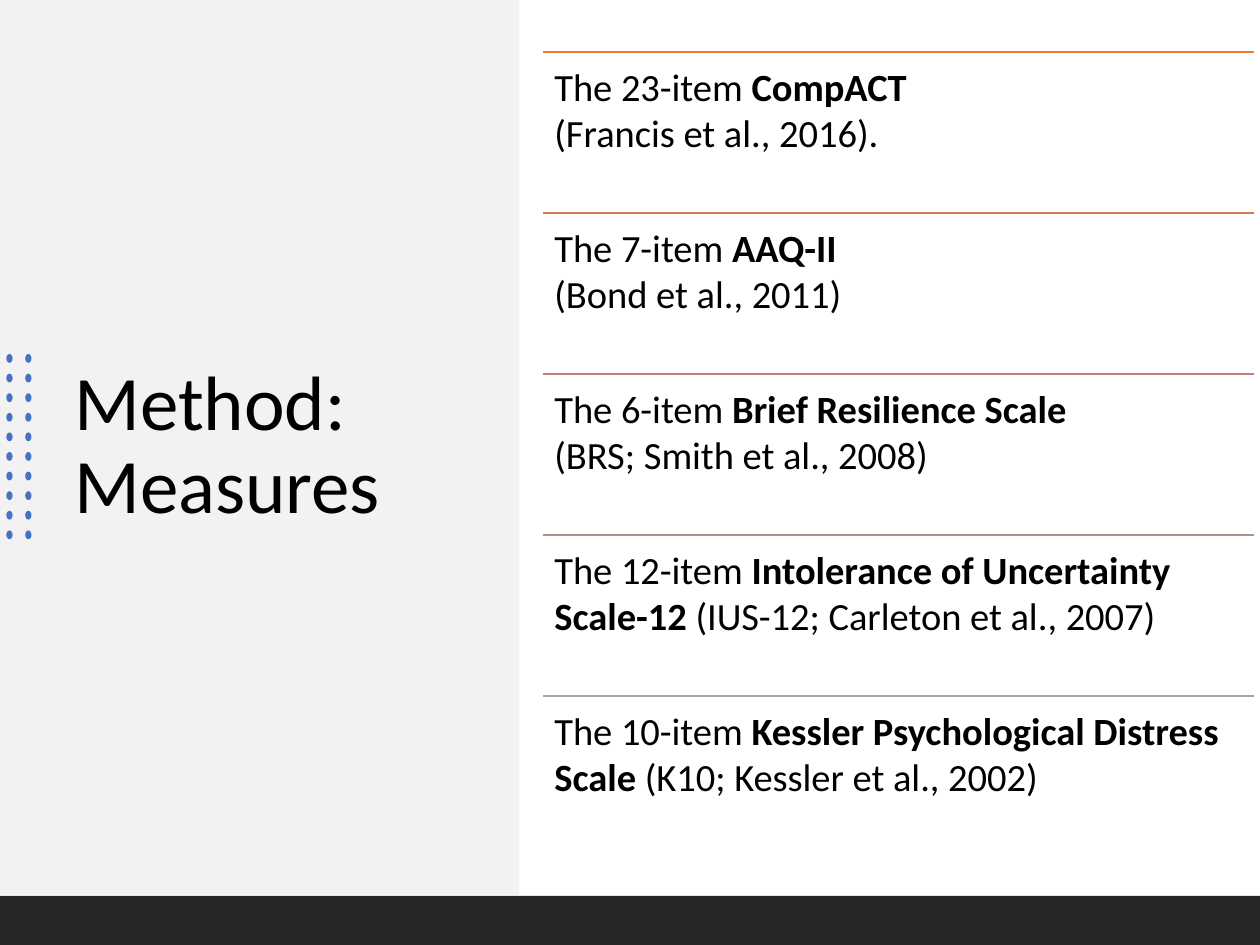
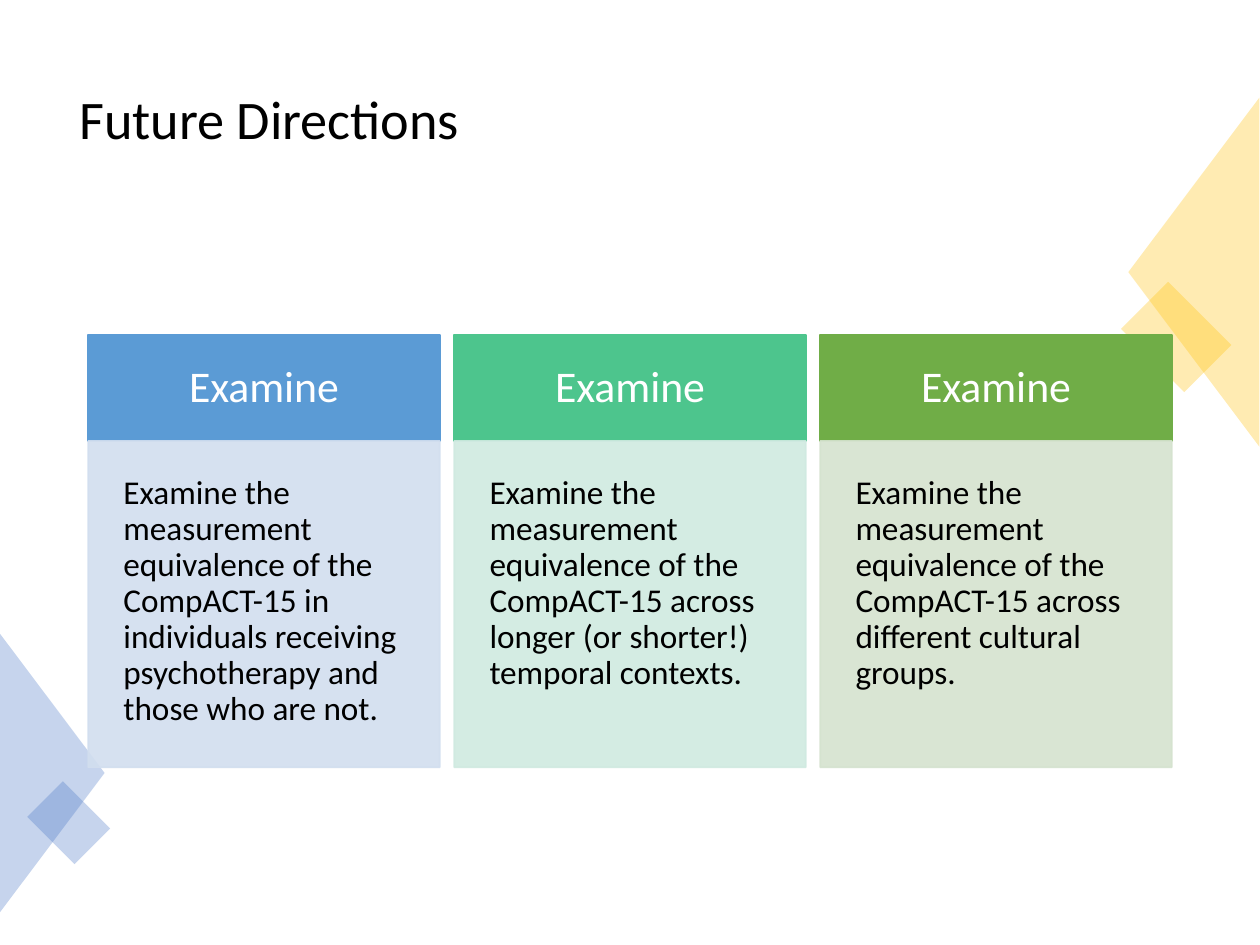
from dataclasses import dataclass

from lxml.etree import SubElement
from pptx import Presentation
from pptx.dml.color import RGBColor
from pptx.enum.shapes import MSO_CONNECTOR as Connector, MSO_SHAPE as Shape
from pptx.enum.text import MSO_ANCHOR as Anchor, MSO_AUTO_SIZE as AutoSize, PP_ALIGN as Align
from pptx.oxml.ns import qn
from pptx.util import Inches, Pt


@dataclass(frozen=True)
class Theme:
    """Colours, font and type sizes shared by the slides."""
    font: str = "Calibri"
    text: str = "000000"
    light: str = "FFFFFF"
    panel: str = "F2F2F2"
    band: str = "262626"
    blue: str = "4472C4"
    gold: str = "FFC000"
    side_title: int = 44
    top_title: int = 31
    measure: int = 22
    card_head: int = 25
    card_body: int = 19


THEME = Theme()
TITLE_ONLY = 5

MEASURES = [
    ("ED7D31", "The 23-item ", "CompACT", "\n(Francis et al., 2016)."),
    ("D87A51", "The 7-item ", "AAQ-II", "\n(Bond et al., 2011)"),
    ("C48170", "The 6-item ", "Brief Resilience Scale", "\n(BRS; Smith et al., 2008)"),
    ("B4908B", "The 12-item ", "Intolerance of Uncertainty Scale-12", " (IUS-12; Carleton et al., 2007)"),
    ("A5A5A5", "The 10-item ", "Kessler Psychological Distress Scale", " (K10; Kessler et al., 2002)"),
]

DIRECTIONS = [
    ("5B9BD5", "D2DEEF", "in individuals receiving psychotherapy and those who are not."),
    ("4DC58D", "D0EAE1", "across longer (or shorter!) temporal contexts."),
    ("70AD47", "D5E3CF", "across different cultural groups."),
]


def rgb(code):
    """Turn a hex code into a colour."""
    return RGBColor.from_string(code)


def add_block(slide, kind, box, colour, opacity=100, rotation=0, outlined=False):
    """Add a flat filled shape in a box given in inches."""
    block = slide.shapes.add_shape(kind, *map(Inches, box))
    block.shadow.inherit = False
    block.rotation = rotation
    block.fill.solid()
    block.fill.fore_color.rgb = rgb(colour)
    if outlined:
        block.line.color.rgb = rgb(colour)
        block.line.width = Pt(1)
    else:
        block.line.fill.background()
    if opacity < 100:
        for tint in block.element.spPr.iter(qn("a:srgbClr")):
            SubElement(tint, qn("a:alpha"), val=str(opacity * 1000))
    return block


def set_frame(frame, inset, anchor):
    """Give a text frame equal insets, wrapping and an anchor."""
    frame.word_wrap = True
    frame.vertical_anchor = anchor
    frame.margin_left = frame.margin_right = Inches(inset)
    frame.margin_top = frame.margin_bottom = Inches(inset)


def style(paragraph, size, colour, align=Align.LEFT, spacing=0.9):
    """Set the font, alignment and line spacing of a paragraph."""
    paragraph.alignment = align
    paragraph.line_spacing = spacing
    paragraph.font.name = THEME.font
    paragraph.font.size = Pt(size)
    paragraph.font.color.rgb = rgb(colour)


def set_title(slide, text, box, size):
    """Place and format the title placeholder."""
    title = slide.shapes.title
    title.left, title.top, title.width, title.height = map(Inches, box)
    title.text_frame.text = text
    title.text_frame.auto_size = AutoSize.NONE
    title.text_frame.vertical_anchor = Anchor.MIDDLE
    style(title.text_frame.paragraphs[0], size, THEME.text)
    return title


def add_dots(slide, box, columns=2, rows=10):
    """Fill a box with an even grid of small dots."""
    left, top, width, height = box
    dot_width, dot_height = 0.05, 0.07
    column_step = (width - dot_width) / (columns - 1)
    row_step = (height - dot_height) / (rows - 1)
    for row in range(rows):
        for column in range(columns):
            spot = (left + column * column_step, top + row * row_step, dot_width, dot_height)
            add_block(slide, Shape.OVAL, spot, THEME.blue)


def add_rule(slide, left, top, width, colour):
    """Draw a thin horizontal rule."""
    start, level, end = Inches(left), Inches(top), Inches(left + width)
    rule = slide.shapes.add_connector(Connector.STRAIGHT, start, level, end, level)
    rule.line.color.rgb = rgb(colour)
    rule.line.width = Pt(1)
    SubElement(rule.element.spPr, qn("a:effectLst"))


def add_measures(slide, box):
    """Stack the ruled measures evenly down a box."""
    left, top, width, height = box
    step = height / len(MEASURES)
    for index, (colour, lead, scale, citation) in enumerate(MEASURES):
        level = top + index * step
        add_rule(slide, left, level, width, colour)
        entry = slide.shapes.add_textbox(*map(Inches, (left, level, width, step)))
        set_frame(entry.text_frame, 0.09, Anchor.TOP)
        paragraph = entry.text_frame.paragraphs[0]
        style(paragraph, THEME.measure, THEME.text, spacing=1.0)
        paragraph.add_run().text = lead
        scale_run = paragraph.add_run()
        scale_run.text = scale
        scale_run.font.bold = True
        if citation.startswith("\n"):
            paragraph.add_line_break()
        paragraph.add_run().text = citation.lstrip("\n")


def add_card(slide, box, head_colour, body_colour, ending):
    """Build a heading block over a tinted text block."""
    left, top, width, height = box
    head_height = 0.84
    head = add_block(slide, Shape.RECTANGLE, (left, top, width, head_height), head_colour, outlined=True)
    set_frame(head.text_frame, 0.22, Anchor.MIDDLE)
    head.text_frame.text = "Examine"
    style(head.text_frame.paragraphs[0], THEME.card_head, THEME.light, Align.CENTER)
    body_box = (left, top + head_height, width, height - head_height)
    body = add_block(slide, Shape.RECTANGLE, body_box, body_colour, 90, outlined=True)
    set_frame(body.text_frame, 0.28, Anchor.TOP)
    body.text_frame.text = f"Examine the measurement equivalence of the CompACT-15 {ending}"
    style(body.text_frame.paragraphs[0], THEME.card_body, THEME.text)


def add_cards(slide, box, card_width=2.79):
    """Spread the direction cards evenly across a box."""
    left, top, width, height = box
    step = (width - card_width) / (len(DIRECTIONS) - 1)
    for index, direction in enumerate(DIRECTIONS):
        add_card(slide, (left + index * step, top, card_width, height), *direction)


def add_corner_accents(slide):
    """Add the translucent triangles and squares at both edges."""
    add_block(slide, Shape.RECTANGLE, (8.98, 2.41, 0.71, 0.53), THEME.gold, 30, 45)
    add_block(slide, Shape.ISOSCELES_TRIANGLE, (8.09, 1.64, 2.77, 1.04), THEME.gold, 30, 270)
    add_block(slide, Shape.ISOSCELES_TRIANGLE, (-0.69, 5.72, 2.21, 0.83), THEME.blue, 30, 90)
    add_block(slide, Shape.RECTANGLE, (0.28, 6.33, 0.53, 0.4), THEME.blue, 30, 45)


def build_measures_slide(deck):
    """Build the slide with a side title and the list of measures."""
    slide = deck.slides.add_slide(deck.slide_layouts[TITLE_ONLY])
    title = set_title(slide, "Method: Measures", (0.49, 1.32, 3.18, 4.45), THEME.side_title)
    panel = add_block(slide, Shape.RECTANGLE, (0, 0, 4.12, 7.1), THEME.panel)
    title.element.addprevious(panel.element)
    add_dots(slide, (0.05, 2.81, 0.2, 1.47))
    add_block(slide, Shape.RECTANGLE, (0, 7.11, 10, 0.39), THEME.band)
    add_measures(slide, (4.31, 0.41, 5.64, 6.39))


def build_directions_slide(deck):
    """Build the slide with three cards of future directions."""
    slide = deck.slides.add_slide(deck.slide_layouts[TITLE_ONLY])
    set_title(slide, "Future Directions", (0.53, 0.35, 8.94, 1.24), THEME.top_title)
    add_corner_accents(slide)
    add_cards(slide, (0.7, 2.66, 8.6, 3.43))


def main():
    """Build and save the deck."""
    deck = Presentation()
    deck.slide_width, deck.slide_height = Inches(10), Inches(7.5)
    build_measures_slide(deck)
    build_directions_slide(deck)
    deck.save("out.pptx")


if __name__ == "__main__":
    main()
